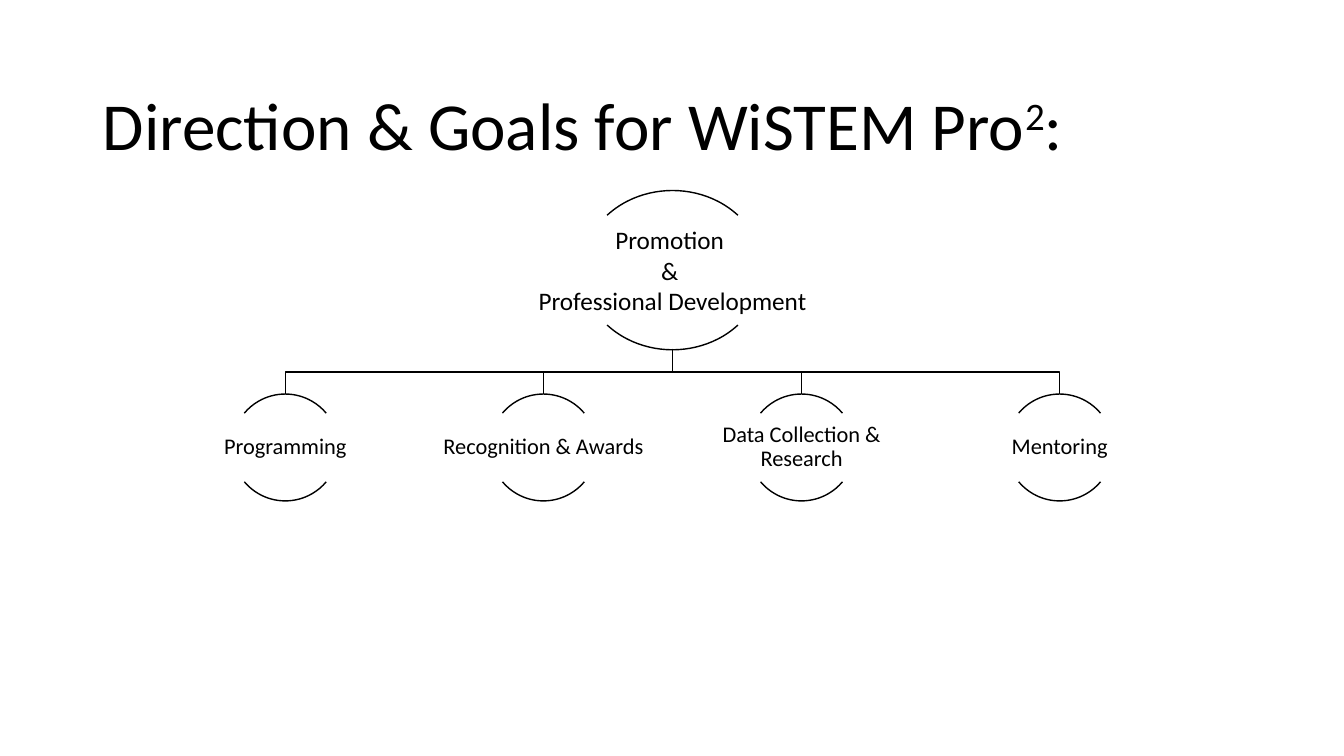
from lxml import etree
from pptx import Presentation
from pptx.dml.color import RGBColor
from pptx.enum.shapes import MSO_SHAPE
from pptx.enum.text import MSO_ANCHOR, MSO_AUTO_SIZE, PP_ALIGN
from pptx.util import Inches, Pt

ARC = MSO_SHAPE.ARC
MIDDLE = MSO_ANCHOR.MIDDLE
NO_FIT = MSO_AUTO_SIZE.NONE
LEFT, CENTER = PP_ALIGN.LEFT, PP_ALIGN.CENTER

BLACK = RGBColor(0, 0, 0)
FONT = "Calibri"
TITLE_ONLY = 5
ARC_ANGLES = ((132, 192), (24, 84))

ROOT = ["Promotion ", "& ", "Professional Development"]
GOALS = ["Programming", "Recognition & Awards", "Data Collection & Research", "Mentoring"]
CENTER_X = 6.67
GOAL_PITCH = 2.56
ROOT_TOP, ROOT_W, ROOT_H = 1.89, 1.79, 1.58
GOAL_TOP, GOAL_SIZE = 3.91, 1.06
BRANCH_TOP, BRANCH_Y = 3.46, 3.69


class Deck:
    def __init__(self):
        self.prs = Presentation()
        self.prs.slide_width, self.prs.slide_height = Inches(13.33), Inches(7.5)
        self.s = self.prs.slides.add_slide(self.prs.slide_layouts[TITLE_ONLY])
        self.chart = None

    def style_run(self, r, size):
        r.font.name, r.font.size, r.font.color.rgb = FONT, Pt(size), BLACK

    def style_outline(self, sp):
        sp.shadow.inherit = False
        sp.fill.background()
        sp.line.color.rgb = BLACK
        sp.line.width = Pt(1)

    def title(self, parts):
        sp = self.s.shapes.title
        sp.left, sp.top, sp.width, sp.height = map(Inches, (0.92, 0.55, 11.5, 1.45))
        tf = sp.text_frame
        tf.vertical_anchor, tf.auto_size = MIDDLE, NO_FIT
        p = tf.paragraphs[0]
        p.alignment, p.line_spacing = LEFT, 0.9
        for text, baseline in parts:
            r = p.add_run()
            r.text = text
            self.style_run(r, 48)
            if baseline:
                r._r.get_or_add_rPr().set("baseline", str(baseline * 1000))

    def start_chart(self):
        self.chart = self.s.shapes.add_group_shape().shapes

    def branch(self, x):
        points = [(CENTER_X, BRANCH_Y), (x, BRANCH_Y), (x, GOAL_TOP)]
        fb = self.chart.build_freeform(Inches(CENTER_X), Inches(BRANCH_TOP))
        fb.add_line_segments([(Inches(px), Inches(py)) for px, py in points], close=False)
        self.style_outline(fb.convert_to_shape())

    def node(self, lines, x, top, w, h, text_h, size, spacing):
        for start, end in ARC_ANGLES:
            sp = self.chart.add_shape(ARC, Inches(x - w / 2), Inches(top), Inches(w), Inches(h))
            sp.adjustments[0], sp.adjustments[1] = start, end
            self.style_outline(sp)
        text_top = top + (h - text_h) / 2
        box = self.chart.add_textbox(Inches(x - w), Inches(text_top), Inches(w * 2), Inches(text_h))
        tf = box.text_frame
        tf.word_wrap, tf.vertical_anchor = True, MIDDLE
        tf.margin_left = tf.margin_right = tf.margin_top = tf.margin_bottom = Inches(0.01)
        tf.text = "\n".join(lines)
        for p in tf.paragraphs:
            p.alignment, p.line_spacing = CENTER, spacing
            for r in p.runs:
                self.style_run(r, size)


def main():
    deck = Deck()
    deck.title([("Direction & Goals for WiSTEM Pro", 0), ("2", 30), (":", 0)])
    deck.start_chart()
    goal_xs = [CENTER_X + (i - (len(GOALS) - 1) / 2) * GOAL_PITCH for i in range(len(GOALS))]
    for x in reversed(goal_xs):
        deck.branch(x)
    deck.node(ROOT, CENTER_X, ROOT_TOP, ROOT_W, ROOT_H, 1.01, 18, 1.0)
    for goal, x in zip(GOALS, goal_xs):
        deck.node([goal], x, GOAL_TOP, GOAL_SIZE, GOAL_SIZE, 0.68, 16, 0.9)
    deck.prs.save("out.pptx")


if __name__ == "__main__":
    main()
